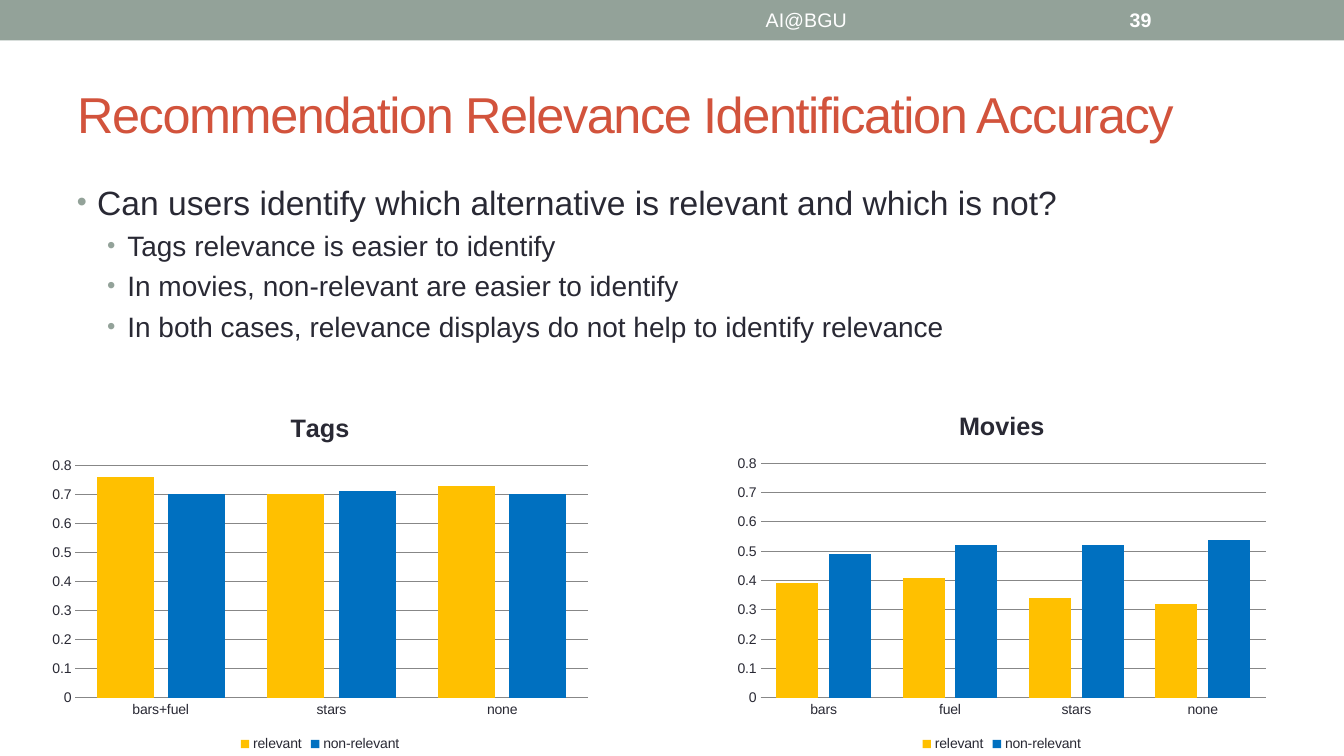
from dataclasses import dataclass

from lxml import etree
from pptx import Presentation
from pptx.chart.data import CategoryChartData
from pptx.dml.color import RGBColor
from pptx.enum.chart import XL_CHART_TYPE, XL_LEGEND_POSITION, XL_TICK_MARK
from pptx.enum.shapes import MSO_SHAPE
from pptx.enum.text import MSO_ANCHOR, MSO_AUTO_SIZE, PP_ALIGN
from pptx.oxml.ns import qn
from pptx.util import Cm, Pt

COLUMNS = XL_CHART_TYPE.COLUMN_CLUSTERED
BOTTOM = XL_LEGEND_POSITION.BOTTOM
NO_TICK = XL_TICK_MARK.NONE
RECTANGLE = MSO_SHAPE.RECTANGLE
TOP, MIDDLE = MSO_ANCHOR.TOP, MSO_ANCHOR.MIDDLE
NO_FIT = MSO_AUTO_SIZE.NONE
LEFT, CENTER = PP_ALIGN.LEFT, PP_ALIGN.CENTER

FONT = "Arial"
SAGE = RGBColor(0x93, 0xA2, 0x99)
RUST = RGBColor(0xD2, 0x53, 0x3C)
INK = RGBColor(0x29, 0x29, 0x34)
WHITE = RGBColor(0xFF, 0xFF, 0xFF)
GRID = RGBColor(0x87, 0x87, 0x87)
SERIES_COLORS = {
    "relevant": RGBColor(0xFF, 0xC0, 0x00),
    "non-relevant": RGBColor(0x00, 0x70, 0xC0),
}


@dataclass
class Box:
    left: float
    top: float
    width: float
    height: float

    def lengths(self) -> tuple:
        return Cm(self.left), Cm(self.top), Cm(self.width), Cm(self.height)


@dataclass
class Bullet:
    text: str
    level: int = 1


@dataclass
class AccuracyChart:
    title: str
    box: Box
    categories: list[str]
    values: list[list[float]]


BULLETS = [
    Bullet("Can users identify which alternative is relevant and which is not?", 0),
    Bullet("Tags relevance is easier to identify"),
    Bullet("In movies, non-relevant are easier to identify"),
    Bullet("In both cases, relevance displays do not help to identify relevance"),
]
BULLET_SIZES = [24, 20]
BULLET_MARGINS = [0.51, 1.27]
BULLET_HANG = 0.51

CHARTS = [
    AccuracyChart("Tags", Box(1.04, 9.93, 14.05, 9.12),
                  ["bars+fuel", "stars", "none"],
                  [[0.76, 0.7, 0.73], [0.7, 0.71, 0.7]]),
    AccuracyChart("Movies", Box(18.31, 9.88, 13.87, 9.17),
                  ["bars", "fuel", "stars", "none"],
                  [[0.39, 0.41, 0.34, 0.32], [0.49, 0.52, 0.52, 0.54]]),
]


def style_font(font, size: float, color: RGBColor, bold: bool = False) -> None:
    font.name = FONT
    font.size = Pt(size)
    font.bold = bold
    font.color.rgb = color


def write(paragraph, text: str, *, size: float, color: RGBColor,
          bold: bool = False, align=LEFT, spacing: float = 0) -> None:
    """Put one formatted run in a paragraph; spacing is in points."""
    paragraph.alignment = align
    run = paragraph.add_run()
    run.text = text
    style_font(run.font, size, color, bold)
    if spacing:
        run.font._element.set("spc", str(round(spacing * 100)))


def prepare_frame(shape, anchor):
    frame = shape.text_frame
    frame.word_wrap = True
    frame.auto_size = NO_FIT
    frame.vertical_anchor = anchor
    return frame


def add_text_box(slide, box: Box, anchor=MIDDLE):
    return prepare_frame(slide.shapes.add_textbox(*box.lengths()), anchor)


def add_bullet(paragraph, margin: float) -> None:
    properties = paragraph._p.get_or_add_pPr()
    properties.set("marL", str(Cm(margin)))
    properties.set("indent", str(-Cm(BULLET_HANG)))
    color = etree.SubElement(properties, qn("a:buClr"))
    etree.SubElement(color, qn("a:srgbClr"), val=str(SAGE))
    etree.SubElement(properties, qn("a:buSzPct"), val="85000")
    etree.SubElement(properties, qn("a:buFont"), typeface=FONT)
    etree.SubElement(properties, qn("a:buChar"), char="•")


def add_bullets(slide) -> None:
    frame = add_text_box(slide, Box(1.69, 4.45, 30.48, 5.2), TOP)
    for index, bullet in enumerate(BULLETS):
        paragraph = frame.add_paragraph() if index else frame.paragraphs[0]
        add_bullet(paragraph, BULLET_MARGINS[bullet.level])
        paragraph.level = bullet.level
        if index:
            paragraph.space_before = Pt(4.8)
        write(paragraph, bullet.text, size=BULLET_SIZES[bullet.level], color=INK)


def add_accuracy_chart(slide, accuracy: AccuracyChart) -> None:
    data = CategoryChartData()
    data.categories = accuracy.categories
    for name, values in zip(SERIES_COLORS, accuracy.values):
        data.add_series(name, values)
    chart = slide.shapes.add_chart(COLUMNS, *accuracy.box.lengths(), data).chart
    style_font(chart.font, 10, INK)

    # Title and legend
    chart.has_title = True
    write(chart.chart_title.text_frame.paragraphs[0], accuracy.title,
          size=18, color=INK, bold=True, align=CENTER)
    chart.chart_title.include_in_layout = False
    chart.has_legend = True
    chart.legend.position = BOTTOM
    chart.legend.include_in_layout = False

    # Columns
    plot = chart.plots[0]
    plot.gap_width = 75
    plot.overlap = -25
    plot.vary_by_categories = False
    for series in plot.series:
        series.format.fill.solid()
        series.format.fill.fore_color.rgb = SERIES_COLORS[series.name]

    # Axes
    for axis in (chart.category_axis, chart.value_axis):
        axis.major_tick_mark = NO_TICK
        axis.minor_tick_mark = NO_TICK
    chart.category_axis.format.line.color.rgb = GRID
    value_axis = chart.value_axis
    value_axis.minimum_scale = 0
    value_axis.maximum_scale = 0.8
    value_axis.major_unit = 0.1
    value_axis.format.line.fill.background()
    value_axis.has_major_gridlines = True
    value_axis.major_gridlines.format.line.color.rgb = GRID


def main() -> None:
    presentation = Presentation()
    presentation.slide_width = Cm(33.87)
    presentation.slide_height = Cm(19.05)
    slide = presentation.slides.add_slide(presentation.slide_layouts[5])

    # Top band with footer and page number
    band = slide.shapes.add_shape(RECTANGLE, *Box(0, 0, 33.87, 1.02).lengths())
    band.shadow.inherit = False
    band.fill.solid()
    band.fill.fore_color.rgb = SAGE
    band.line.fill.background()
    footer = add_text_box(slide, Box(12.7, 0.05, 15.24, 0.91))
    write(footer.paragraphs[0], "AI@BGU", size=14, color=WHITE, align=CENTER)
    number = add_text_box(slide, Box(28.22, 0.05, 3.96, 0.91))
    write(number.paragraphs[0], "39", size=14, color=WHITE, bold=True)

    # Title
    title = slide.shapes.title
    title.left, title.top, title.width, title.height = Box(1.69, 1.48, 30.48, 2.74).lengths()
    write(prepare_frame(title, MIDDLE).paragraphs[0],
          "Recommendation Relevance Identification Accuracy",
          size=36, color=RUST, spacing=-1)

    # Body and charts
    add_bullets(slide)
    for accuracy in CHARTS:
        add_accuracy_chart(slide, accuracy)

    presentation.save("out.pptx")


if __name__ == "__main__":
    main()
